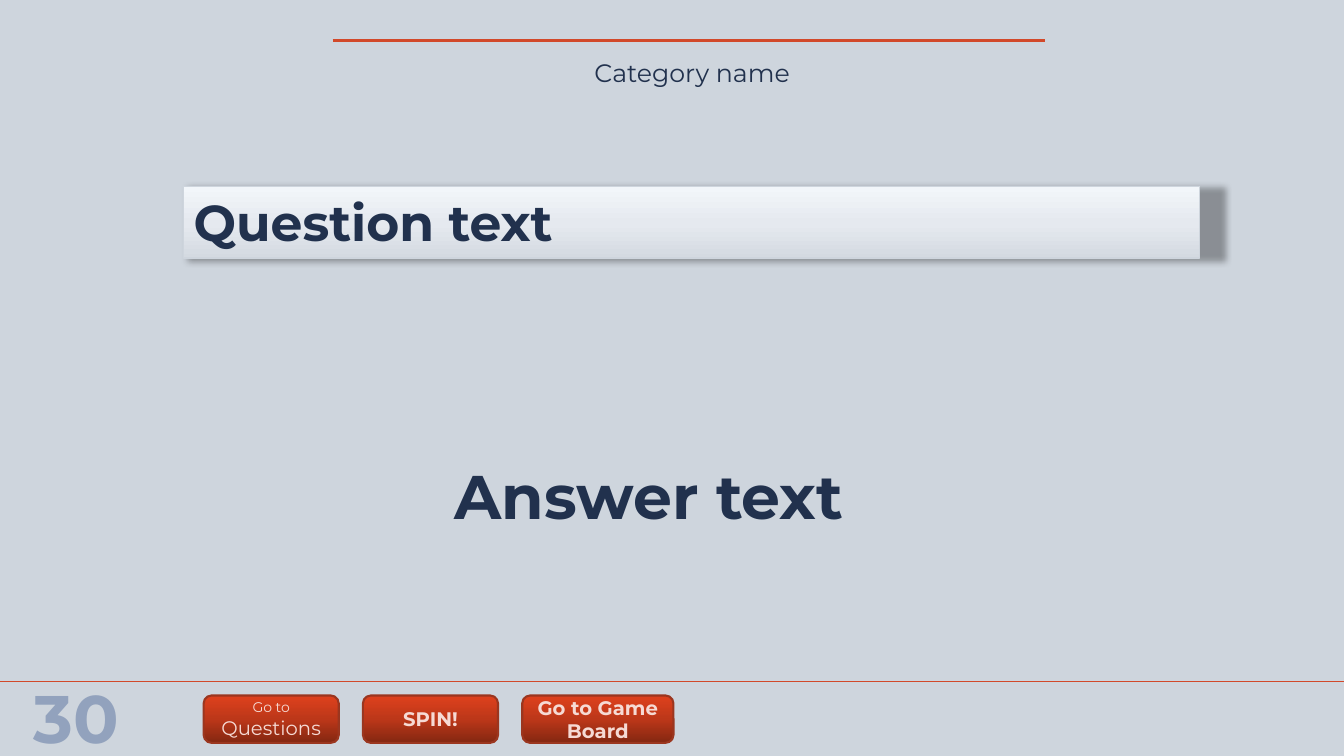
from lxml import etree
from pptx import Presentation
from pptx.dml.color import RGBColor
from pptx.enum import shapes, text
from pptx.oxml import ns
from pptx.util import Inches, Pt

FONT = "Montserrat"
PALE = RGBColor(0xCE, 0xD5, 0xDD)
NAVY = RGBColor(0x21, 0x31, 0x4D)
STEEL = RGBColor(0x92, 0xA2, 0xBD)
RED = RGBColor(0xD2, 0x49, 0x2A)
RUST = RGBColor(0x9B, 0x36, 0x1F)
BLUSH = RGBColor(0xF6, 0xDA, 0xD4)

# Gradient stops run from the bottom edge to the top: percent, colour
RED_FADE = [(0, RGBColor(0x84, 0x27, 0x11)), (50, RGBColor(0xBC, 0x37, 0x19)),
            (100, RGBColor(0xDF, 0x41, 0x1D))]
GREY_FADE = [(0, RGBColor(0xD4, 0xDA, 0xE1)), (48, RGBColor(0xE5, 0xE9, 0xEF)),
             (100, RGBColor(0xF2, 0xF6, 0xFA))]

# Content
# Rules: x1, y1, x2, y2, width
RULES = [(13.33, 6.76, 0, 6.76, 1), (3.3, 0.4, 10.36, 0.4, 2)]
QUESTION = ("Question text", 36, True)
QUESTION_BOX = (1.82, 1.85, 10.08, 0.71)
# Labels: box, (text, size, bold), colour, alignment
CENTER, LEFT = text.PP_ALIGN.CENTER, text.PP_ALIGN.LEFT
LABELS = [
    ((0.21, 6.66, 1.1, 0.91), ("30", 48, True), STEEL, CENTER),
    ((3.36, 0.52, 7.01, 0.4), ("Category name", 18, False), NAVY, CENTER),
    ((4.41, 4.49, 6.22, 0.84), ("Answer text", 44, True), NAVY, LEFT),
]
# Buttons: width, lines of text
BUTTONS = [
    (1.34, [("Go to", 10, False), ("Questions", 14, False)]),
    (1.34, [("SPIN!", 14, True)]),
    (1.5, [("Go to Game Board", 14, True)]),
]
BUTTON_X, BUTTON_Y, BUTTON_H, BUTTON_GAP = 2.02, 6.9, 0.47, 0.24


def add_child(parent, tag, **attrs):
    child = etree.SubElement(parent, ns.qn(tag))
    for key, value in attrs.items():
        child.set(key, str(value))
    return child


def fade(shape, stops):
    shape.fill.gradient()
    shape.fill.gradient_angle = 90
    bands = shape._element.spPr.find(".//" + ns.qn("a:gsLst"))
    for old in list(bands):
        bands.remove(old)
    for place, color in stops:
        stop = add_child(bands, "a:gs", pos=place * 1000)
        add_child(stop, "a:srgbClr", val=color)


def outline(shape, color, width):
    shape.line.color.rgb = color
    shape.line.width = Pt(width)


def write(shape, lines, color, align, anchor=text.MSO_ANCHOR.TOP):
    frame = shape.text_frame
    frame.word_wrap = True
    frame.auto_size = text.MSO_AUTO_SIZE.NONE
    frame.vertical_anchor = anchor
    para = frame.paragraphs[0]
    para.alignment = align
    for i, (words, size, bold) in enumerate(lines):
        if i:
            para.add_line_break()
        run = para.add_run()
        run.text = words
        run.font.name = FONT
        run.font.size = Pt(size)
        run.font.bold = bold
        run.font.color.rgb = color


def main():
    deck = Presentation()
    deck.slide_width, deck.slide_height = Inches(13.33), Inches(7.5)
    slide = deck.slides.add_slide(deck.slide_layouts[5])
    slide.background.fill.solid()
    slide.background.fill.fore_color.rgb = PALE

    # Question bar, with a soft shadow a little wider than the bar
    bar = slide.shapes.title
    bar.left, bar.top, bar.width, bar.height = map(Inches, QUESTION_BOX)
    fade(bar, GREY_FADE)
    outline(bar, PALE, 1)
    write(bar, [QUESTION], NAVY, LEFT)
    effects = add_child(bar._element.spPr, "a:effectLst")
    shadow = add_child(effects, "a:outerShdw", blurRad=Pt(5), dist=Pt(1),
                       dir=5400000, sx=102000, algn="ctr", rotWithShape=0)
    black = add_child(shadow, "a:srgbClr", val="000000")
    add_child(black, "a:alpha", val=32000)

    # Rules
    for *ends, width in RULES:
        rule = slide.shapes.add_connector(
            shapes.MSO_CONNECTOR.STRAIGHT, *map(Inches, ends))
        outline(rule, RED, width)
        add_child(rule._element.spPr, "a:effectLst")

    # Points, category and answer
    for box, line, color, align in LABELS:
        label = slide.shapes.add_textbox(*map(Inches, box))
        write(label, [line], color, align)

    # Buttons in a row
    left = BUTTON_X
    for width, lines in BUTTONS:
        button = slide.shapes.add_shape(
            shapes.MSO_SHAPE.ROUNDED_RECTANGLE,
            *map(Inches, (left, BUTTON_Y, width, BUTTON_H)))
        button.shadow.inherit = False
        fade(button, RED_FADE)
        outline(button, RUST, 1.5)
        write(button, lines, BLUSH, CENTER, text.MSO_ANCHOR.MIDDLE)
        left += width + BUTTON_GAP

    deck.save("out.pptx")


if __name__ == "__main__":
    main()
